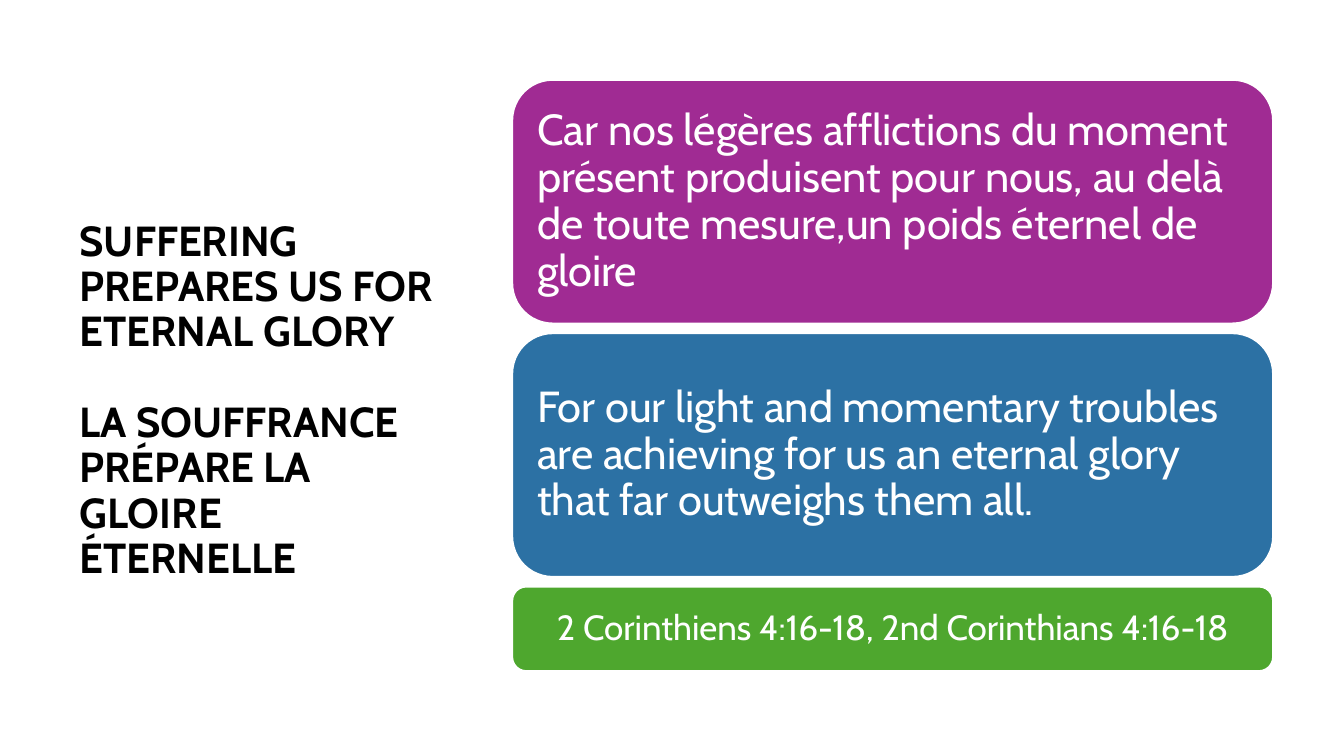
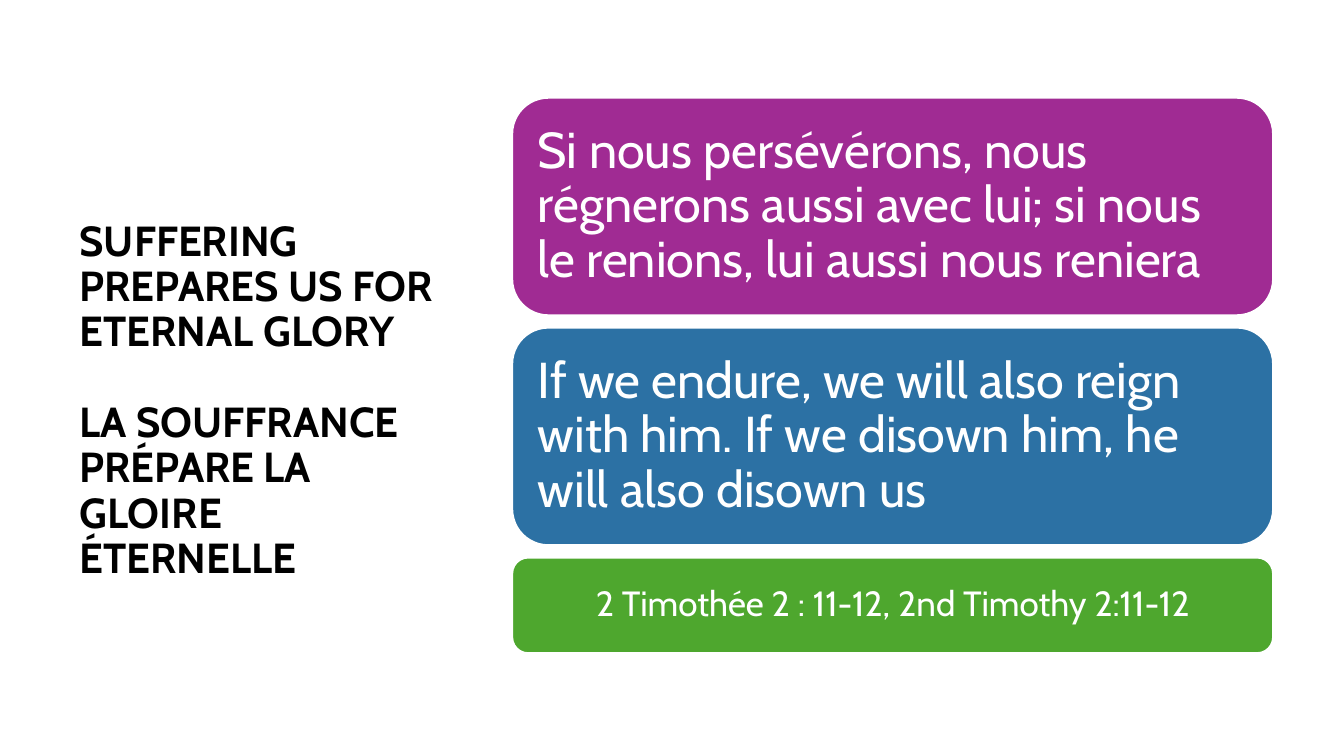
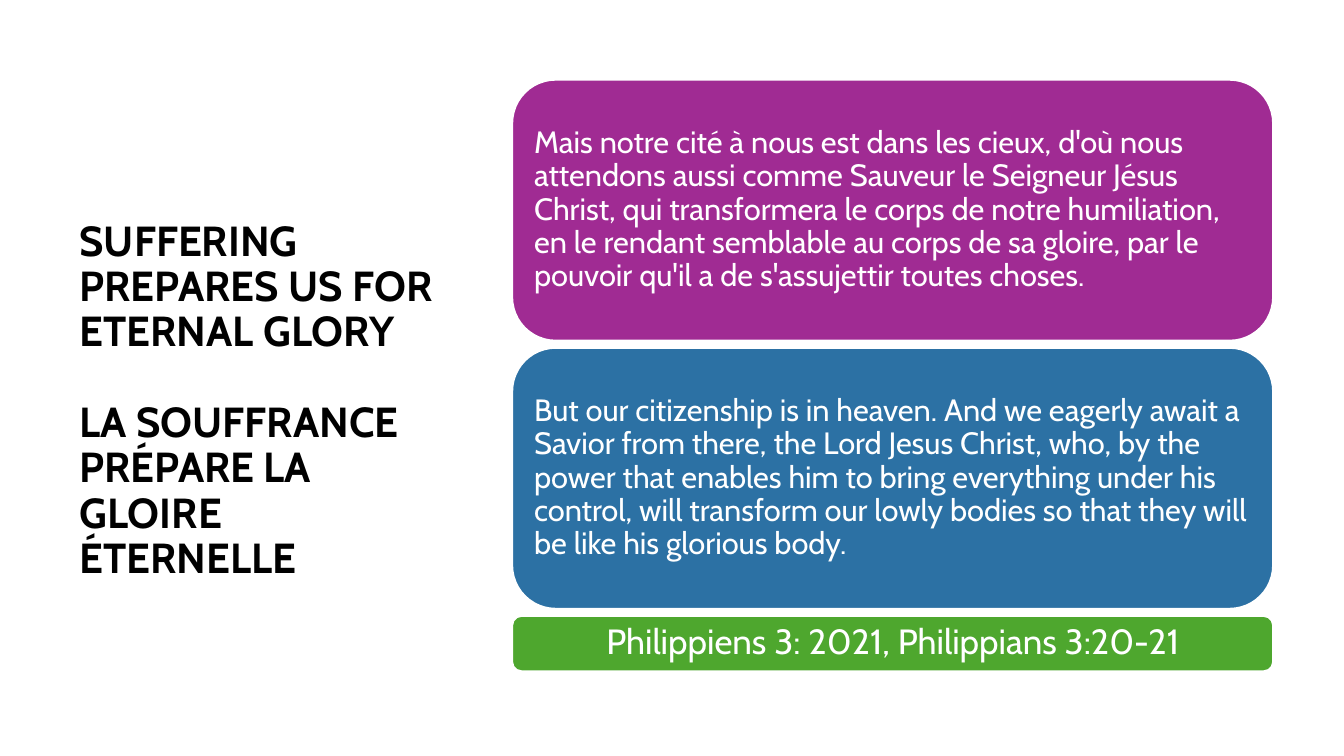
"""Build three bilingual verse slides with a shared title and stacked cards."""
from pptx import Presentation
from pptx.dml.color import RGBColor
from pptx.enum.shapes import MSO_SHAPE
from pptx.enum.text import MSO_ANCHOR, MSO_AUTO_SIZE, PP_ALIGN
from pptx.util import Pt

HUES = {
    "black": "000000",
    "white": "FFFFFF",
    "french": "A02B93",
    "english": "2C71A4",
    "source": "4EA72E",
}
FONT = "Cabin"
TITLE = [
    "SUFFERING PREPARES US FOR ETERNAL GLORY",
    "LA SOUFFRANCE PRÉPARE LA GLOIRE ÉTERNELLE",
]
LEFT, WIDTH, MIDDLE = 365.8, 543.6, 268.2
SLIDES = [
    {
        "french": "Car nos légères afflictions du moment présent produisent pour "
                  "nous, au delà de toute mesure,un poids éternel de gloire",
        "english": "For our light and momentary troubles are achieving for us an "
                   "eternal glory that far outweighs them all.",
        "source": "2 Corinthiens 4:16-18, 2nd Corinthians 4:16-18",
        "size": 31, "tall": 174.2, "short": 60.5, "gap": 6.8,
    },
    {
        "french": "Si nous persévérons, nous régnerons aussi avec lui; si nous le "
                  "renions, lui aussi nous reniera",
        "english": "If we endure, we will also reign with him. If we disown him, "
                   "he will also disown us",
        "source": "2 Timothée 2 : 11-12, 2nd Timothy 2:11-12",
        "size": 36, "tall": 155.5, "short": 68.4, "gap": 8.7,
    },
    {
        "french": "Mais notre cité à nous est dans les cieux, d'où nous attendons "
                  "aussi comme Sauveur le Seigneur Jésus Christ, qui transformera "
                  "le corps de notre humiliation, en le rendant semblable au corps "
                  "de sa gloire, par le pouvoir qu'il a de s'assujettir toutes "
                  "choses.",
        "english": "But our citizenship is in heaven. And we eagerly await a Savior "
                   "from there, the Lord Jesus Christ, who, by the power that "
                   "enables him to bring everything under his control, will "
                   "transform our lowly bodies so that they will be like his "
                   "glorious body.",
        "source": "Philippiens 3: 2021, Philippians 3:20-21",
        "size": 22, "tall": 186.5, "short": 39.6, "gap": 5,
    },
]


def color(name):
    """Return the named colour."""
    return RGBColor.from_string(HUES[name])


def write(frame, lines, size=30, hue="white", bold=False, align=PP_ALIGN.LEFT,
          space=0):
    """Fill a frame with one formatted paragraph per line."""
    frame.word_wrap = True
    frame.auto_size = MSO_AUTO_SIZE.NONE
    frame.vertical_anchor = MSO_ANCHOR.MIDDLE
    for rank, line in enumerate(lines):
        para = frame.add_paragraph() if rank else frame.paragraphs[0]
        para.alignment = align
        para.line_spacing = 0.9
        para.space_before = Pt(space if rank else 0)
        run = para.add_run()
        run.text = line
        font = run.font
        font.name, font.size, font.bold = FONT, Pt(size), bold
        font.color.rgb = color(hue)


def place(shape, left, top, width, height):
    """Set the position and size of a shape in points."""
    shape.left, shape.top = Pt(left), Pt(top)
    shape.width, shape.height = Pt(width), Pt(height)


def card(slide, text, fill, top, height, size, align):
    """Add one rounded card whose padding follows its text size."""
    box = slide.shapes.add_shape(MSO_SHAPE.ROUNDED_RECTANGLE, Pt(LEFT), Pt(top),
                                 Pt(WIDTH), Pt(height))
    box.shadow.inherit = False
    box.fill.solid()
    box.fill.fore_color.rgb = color(fill)
    box.line.color.rgb = color("white")
    box.line.width = Pt(1.5)
    frame = box.text_frame
    pad = Pt(0.3 * size)
    frame.margin_left = frame.margin_right = pad
    frame.margin_top = frame.margin_bottom = pad
    write(frame, [text], size=size, align=align)


def stack(slide, verse):
    """Stack the three cards of a verse around the common middle."""
    tall, short, gap = verse["tall"], verse["short"], verse["gap"]
    top = MIDDLE - (2 * tall + short + 2 * gap) / 2
    for name, height, size, align in (
        ("french", tall, verse["size"], PP_ALIGN.LEFT),
        ("english", tall, verse["size"], PP_ALIGN.LEFT),
        ("source", short, 25, PP_ALIGN.CENTER),
    ):
        card(slide, verse[name], name, top, height, size, align)
        top += height + gap


def main():
    """Build and save the deck."""
    deck = Presentation()
    deck.slide_width, deck.slide_height = Pt(960), Pt(540)
    layout = deck.slide_layouts[5]
    place(layout.placeholders[0], 49.7, 66.6, 269.3, 440)
    for verse in SLIDES:
        slide = deck.slides.add_slide(layout)
        write(slide.shapes.title.text_frame, TITLE, hue="black", bold=True,
              space=32.4)
        stack(slide, verse)
    deck.save("out.pptx")


if __name__ == "__main__":
    main()
